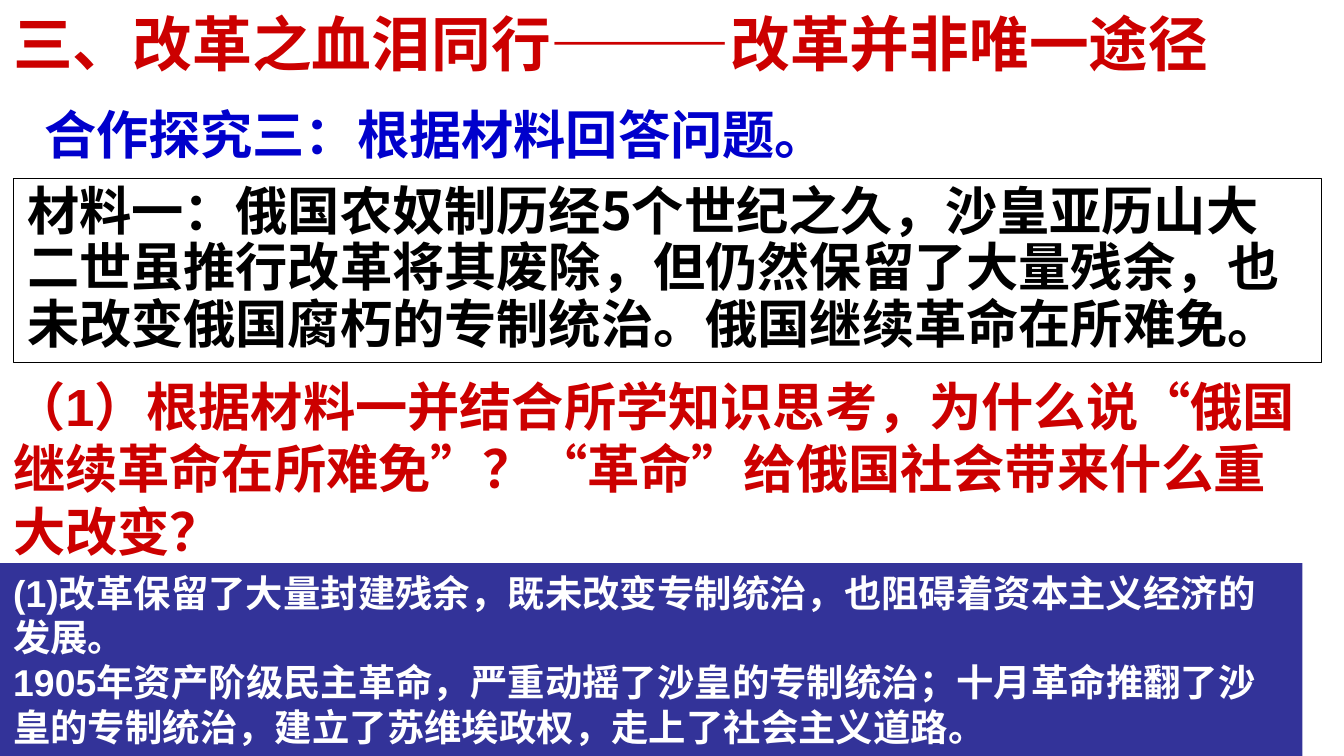
"""Build a history slide on reform and revolution in Russia."""
import pptx
import pptx.dml.color
import pptx.enum.shapes
import pptx.enum.text
import pptx.oxml
import pptx.oxml.ns
import pptx.util

RED = pptx.dml.color.RGBColor(0xCC, 0x00, 0x00)
BLUE = pptx.dml.color.RGBColor(0x00, 0x00, 0xCC)
INDIGO = pptx.dml.color.RGBColor(0x33, 0x33, 0x99)
BLACK = pptx.dml.color.RGBColor(0x00, 0x00, 0x00)
WHITE = pptx.dml.color.RGBColor(0xFF, 0xFF, 0xFF)
HEADING_FONT = "Noto Sans CJK SC"
BODY_FONT = "Arial"

presentation = pptx.Presentation()
presentation.slide_width = pptx.util.Inches(10)
presentation.slide_height = presentation.slide_width * 9 // 16
slide = presentation.slides.add_slide(presentation.slide_layouts[6])
column = presentation.slide_width / 100
row = presentation.slide_height / 100


def write_text(shape, lines, size, font_name, color, wrap=True, spacing=None):
    frame = shape.text_frame
    frame.word_wrap = wrap
    frame.vertical_anchor = pptx.enum.text.MSO_ANCHOR.TOP
    frame.text = "\n".join(lines)
    for paragraph in frame.paragraphs:
        paragraph.alignment = pptx.enum.text.PP_ALIGN.LEFT
        paragraph.line_spacing = spacing
        paragraph.font.size = pptx.util.Pt(size)
        paragraph.font.bold = True
        paragraph.font.name = font_name
        paragraph.font.color.rgb = color
        latin = paragraph._p.pPr.find(".//" + pptx.oxml.ns.qn("a:latin"))
        latin.addnext(pptx.oxml.parse_xml(
            f'<a:ea {pptx.oxml.ns.nsdecls("a")} typeface="{HEADING_FONT}"/>'))


def place(left, top, width, height):
    return [int(length) for length in
            (left * column, top * row, width * column, height * row)]


title = slide.shapes.add_textbox(*place(0, 0, 91.2, 11.2))
write_text(title, ["三、改革之血泪同行———改革并非唯一途径"],
           32, HEADING_FONT, RED, wrap=False)

RECTANGLE = pptx.enum.shapes.MSO_SHAPE.RECTANGLE
material = slide.shapes.add_shape(RECTANGLE, *place(1.03, 23.64, 97.3, 24.36))
material.shadow.inherit = False
material.fill.background()
material.line.color.rgb = BLACK
material.line.width = pptx.util.Pt(0.75)
write_text(material, [
    "材料一：俄国农奴制历经5个世纪之久，沙皇亚历山大二世虽推行改革将其废除，"
    "但仍然保留了大量残余，也未改变俄国腐朽的专制统治。俄国继续革命在所难免。",
], 28, HEADING_FONT, BLACK, spacing=0.9)

task = slide.shapes.add_textbox(*place(2.3, 12.62, 60.6, 10.13))
write_text(task, ["合作探究三：根据材料回答问题。"], 28, BODY_FONT, BLUE, wrap=False)

question = slide.shapes.add_textbox(*place(0, 48.58, 98, 26.67))
write_text(question, [
    "（1）根据材料一并结合所学知识思考，为什么说“俄国继续革命在所难免”？"
    "“革命”给俄国社会带来什么重大改变？",
], 28, BODY_FONT, RED)

answer = slide.shapes.add_shape(RECTANGLE, *place(0, 74.5, 96.9, 25.5))
answer.shadow.inherit = False
answer.fill.solid()
answer.fill.fore_color.rgb = INDIGO
answer.line.fill.background()
write_text(answer, [
    "(1)改革保留了大量封建残余，既未改变专制统治，也阻碍着资本主义经济的发展。",
    "1905年资产阶级民主革命，严重动摇了沙皇的专制统治；十月革命推翻了沙皇的"
    "专制统治，建立了苏维埃政权，走上了社会主义道路。",
], 20, BODY_FONT, WHITE)

presentation.save("out.pptx")
